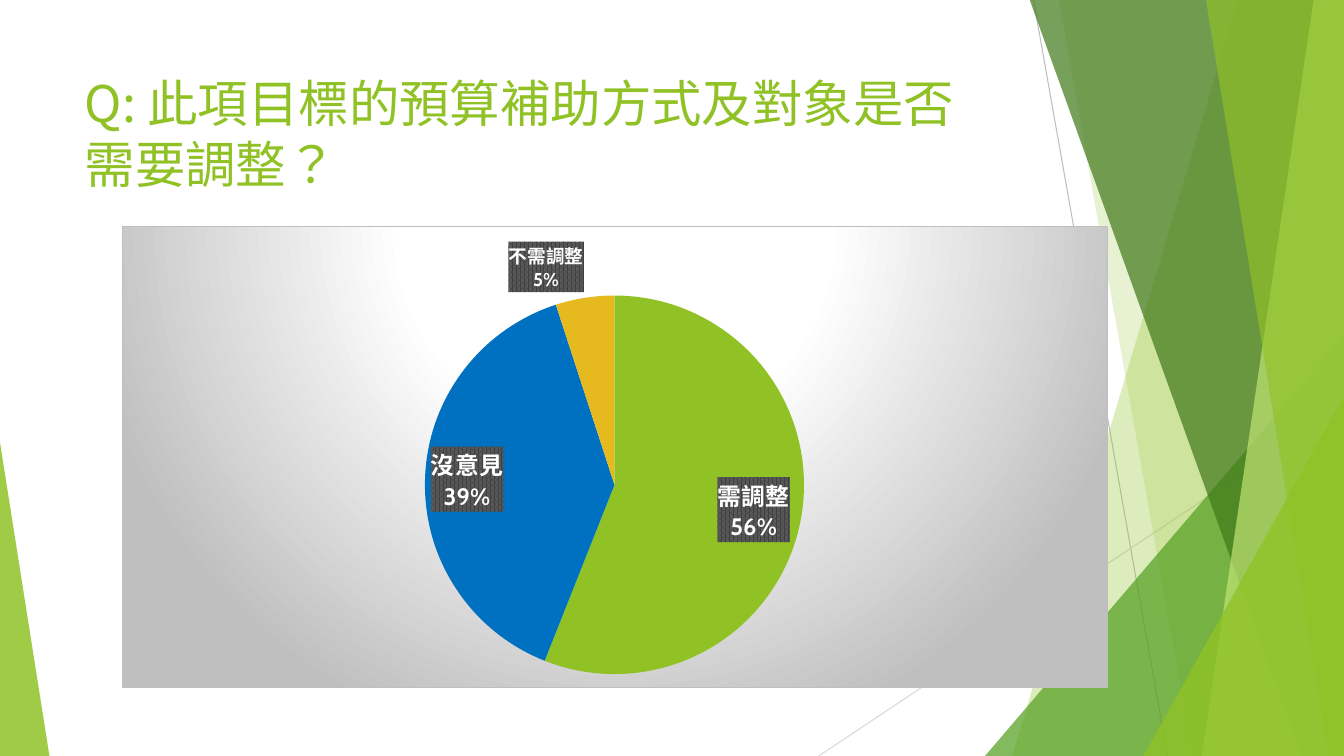
from dataclasses import dataclass
from typing import Any

from lxml.etree import SubElement
from pptx import Presentation
from pptx.chart.chart import Chart
from pptx.chart.data import CategoryChartData
from pptx.dml.color import RGBColor
from pptx.enum.chart import XL_CHART_TYPE, XL_LABEL_POSITION
from pptx.enum.shapes import MSO_CONNECTOR, MSO_SHAPE
from pptx.enum.text import MSO_ANCHOR, MSO_AUTO_SIZE, PP_ALIGN
from pptx.oxml import parse_xml
from pptx.oxml.ns import nsdecls, qn
from pptx.slide import Slide
from pptx.util import Inches, Pt

GREEN = RGBColor(0x90, 0xC2, 0x26)
LEAF = RGBColor(0x54, 0xA0, 0x21)
FOREST = RGBColor(0x3F, 0x78, 0x19)
LIME = RGBColor(0xC0, 0xE4, 0x74)
BLUE = RGBColor(0x00, 0x70, 0xC0)
GOLD = RGBColor(0xE6, 0xB9, 0x1E)
GRAY = RGBColor(0xBF, 0xBF, 0xBF)
PALE_GRAY = RGBColor(0xD9, 0xD9, 0xD9)
CHARCOAL = RGBColor(0x40, 0x40, 0x40)
SLATE = RGBColor(0x59, 0x59, 0x59)
WHITE = RGBColor(0xFF, 0xFF, 0xFF)

WIDTH, HEIGHT = 13.33, 7.5
BAND_TOP = -0.01
TITLE_FONT = "Noto Sans CJK SC"
CHART_FONT = "Cabin"


@dataclass(frozen=True)
class Ray:
    start: tuple[float, float]
    end: tuple[float, float]
    color: RGBColor


@dataclass(frozen=True)
class Band:
    """A facet reaching the right slide edge, given its left corners."""
    top_left: float
    bottom_left: float
    color: RGBColor
    opacity: int


@dataclass(frozen=True)
class Triangle:
    left: float
    top: float
    width: float
    apex: float
    color: RGBColor
    opacity: int


@dataclass(frozen=True)
class Slice:
    category: str
    value: int
    color: RGBColor
    label_size: float
    label_position: Any
    label_drop: float = 0


RAYS = [
    Ray((10.25, 0), (11.58, HEIGHT), GRAY),
    Ray((WIDTH, 4.03), (8.12, HEIGHT), PALE_GRAY),
]
FACETS = [
    Band(12.28, 10.04, GREEN, 30),
    Band(10.5, 11.83, GREEN, 20),
    Triangle(9.77, 3.33, 3.56, 1, LEAF, 72),
    Band(10.21, 12.91, FOREST, 70),
    Band(13.03, 11.92, LIME, 70),
    Band(11.96, 13.18, GREEN, 65),
    Triangle(11.34, 3.93, 1.99, 1, GREEN, 80),
    Triangle(0, 4.39, 0.49, 0, GREEN, 85),
]
SLICES = [
    Slice("需調整", 56, GREEN, 17, XL_LABEL_POSITION.INSIDE_END, 0.05),
    Slice("沒意見", 39, BLUE, 17, XL_LABEL_POSITION.INSIDE_END),
    Slice("不需調整", 5, GOLD, 13.3, XL_LABEL_POSITION.OUTSIDE_END),
]


def apply_format(target: Any, values: dict[str, Any]) -> None:
    for name, value in values.items():
        setattr(target, name, value)


def draw_ray(slide: Slide, ray: Ray) -> None:
    connector = slide.shapes.add_connector(
        MSO_CONNECTOR.STRAIGHT, *map(Inches, ray.start + ray.end))
    connector.line.color.rgb = ray.color
    connector.line.width = Pt(0.75)
    SubElement(connector.element.spPr, qn("a:effectLst"))


def draw_facet(slide: Slide, facet: Band | Triangle) -> None:
    if isinstance(facet, Band):
        corners = [(WIDTH, BAND_TOP), (WIDTH, HEIGHT), (facet.bottom_left, HEIGHT)]
        builder = slide.shapes.build_freeform(Inches(facet.top_left), Inches(BAND_TOP))
        builder.add_line_segments([(Inches(x), Inches(y)) for x, y in corners])
        shape = builder.convert_to_shape()
    else:
        shape = slide.shapes.add_shape(
            MSO_SHAPE.ISOSCELES_TRIANGLE, Inches(facet.left), Inches(facet.top),
            Inches(facet.width), Inches(HEIGHT - facet.top))
        shape.adjustments[0] = facet.apex
    shape.shadow.inherit = False
    shape.line.fill.background()
    shape.fill.solid()
    shape.fill.fore_color.rgb = facet.color
    color = shape.element.spPr.find(".//" + qn("a:srgbClr"))
    SubElement(color, qn("a:alpha"), val=str(facet.opacity * 1000))


def write_title(slide: Slide) -> None:
    title = slide.shapes.title
    apply_format(title, {"left": Inches(0.74), "top": Inches(0.67),
                         "width": Inches(9.4), "height": Inches(1.44)})
    apply_format(title.text_frame, {
        "word_wrap": True, "auto_size": MSO_AUTO_SIZE.NONE, "margin_top": Inches(0.04),
        "vertical_anchor": MSO_ANCHOR.TOP, "margin_right": Inches(0.3)})
    paragraph = title.text_frame.paragraphs[0]
    apply_format(paragraph, {"alignment": PP_ALIGN.LEFT, "line_spacing": Pt(43.6)})
    run = paragraph.add_run()
    run.text = "Q: 此項目標的預算補助方式及對象是否需要調整？"
    apply_format(run.font, {"size": Pt(36), "name": TITLE_FONT, "bold": False})
    run.font.color.rgb = GREEN
    run.font._element.set("lang", "zh-TW")
    SubElement(run.font._element, qn("a:ea"), typeface=TITLE_FONT)
    slide.shapes._spTree.append(title.element)  # in front of the facets


def add_manual_layout(parent: Any, index: int, values: dict[str, str]) -> None:
    layout = parse_xml(f'<c:layout {nsdecls("c")}><c:manualLayout/></c:layout>')
    for tag, value in values.items():
        SubElement(layout[0], qn(f"c:{tag}"), val=value)
    parent.insert(index, layout)


def style_chart_area(chart: Chart) -> None:
    """Give the chart its radial background, border and pie position."""
    stops = "".join(
        f'<a:gs pos="{position * 1000}"><a:srgbClr val="{color}"/></a:gs>'
        for position, color in [(0, WHITE), (39, WHITE), (100, GRAY)])
    area = parse_xml(
        f'<c:spPr {nsdecls("c", "a")}><a:gradFill><a:gsLst>{stops}</a:gsLst>'
        '<a:path path="circle"><a:fillToRect l="50000" t="-80000" r="50000" b="180000"/>'
        f'</a:path></a:gradFill><a:ln w="{Pt(0.75)}"><a:solidFill>'
        f'<a:srgbClr val="{GRAY}"/></a:solidFill></a:ln></c:spPr>')
    chart.element.find(qn("c:chart")).addnext(area)

    plot_area = chart.element.find(".//" + qn("c:plotArea"))
    for layout in plot_area.findall(qn("c:layout")):
        plot_area.remove(layout)
    add_manual_layout(plot_area, 0, {
        "layoutTarget": "inner", "xMode": "edge", "yMode": "edge",
        "x": "0.307", "y": "0.15", "w": "0.385", "h": "0.82"})


def style_label(element: Any) -> None:
    """Show category and percent on a dark patterned plate."""
    for tag, value in {"showVal": "0", "showCatName": "1", "showPercent": "1"}.items():
        element.find(qn(f"c:{tag}")).set("val", value)
    last_flag = element.find(qn("c:showBubbleSize"))
    if last_flag is None:
        last_flag = element.find(qn("c:showPercent"))
    separator = parse_xml(f'<c:separator {nsdecls("c")}>\n</c:separator>')
    last_flag.addnext(separator)
    for plate in element.findall(qn("c:spPr")):
        element.remove(plate)
    element.find(qn("c:txPr")).addprevious(parse_xml(
        f'<c:spPr {nsdecls("c", "a")}><a:pattFill prst="pct75">'
        f'<a:fgClr><a:srgbClr val="{CHARCOAL}"/></a:fgClr>'
        f'<a:bgClr><a:srgbClr val="{SLATE}"/></a:bgClr></a:pattFill>'
        '<a:ln><a:noFill/></a:ln></c:spPr>'))


def format_label_font(font: Any, size: float) -> None:
    apply_format(font, {"size": Pt(size), "bold": True, "name": CHART_FONT})
    font.color.rgb = WHITE


def style_slice(point: Any, pie_slice: Slice) -> None:
    point.format.fill.solid()
    point.format.fill.fore_color.rgb = pie_slice.color
    point.format.line.fill.background()
    label = point.data_label
    format_label_font(label.font, pie_slice.label_size)
    label.position = pie_slice.label_position
    element = label._get_or_add_dLbl()
    style_label(element)
    if pie_slice.label_drop:
        add_manual_layout(element, 1, {"x": "-0.005", "y": str(pie_slice.label_drop)})


def add_pie(slide: Slide) -> None:
    data = CategoryChartData()
    data.categories = [pie_slice.category for pie_slice in SLICES]
    data.add_series("Series 1", [pie_slice.value for pie_slice in SLICES])
    chart = slide.shapes.add_chart(
        XL_CHART_TYPE.PIE, Inches(1.21), Inches(2.24), Inches(9.78), Inches(4.59),
        data).chart
    apply_format(chart, {"has_title": False, "has_legend": False})
    apply_format(chart.font, {"size": Pt(10), "name": CHART_FONT})
    chart.plots[0].vary_by_categories = True
    style_chart_area(chart)
    series = chart.plots[0].series[0]
    format_label_font(series.data_labels.font, 13.3)
    style_label(series.data_labels._element)
    for index, pie_slice in enumerate(SLICES):
        style_slice(series.points[index], pie_slice)


presentation = Presentation()
apply_format(presentation, {"slide_width": Inches(WIDTH), "slide_height": Inches(HEIGHT)})
main_slide = presentation.slides.add_slide(presentation.slide_layouts[5])
for light_ray in RAYS:
    draw_ray(main_slide, light_ray)
for background_facet in FACETS:
    draw_facet(main_slide, background_facet)
write_title(main_slide)
add_pie(main_slide)
presentation.save("out.pptx")
